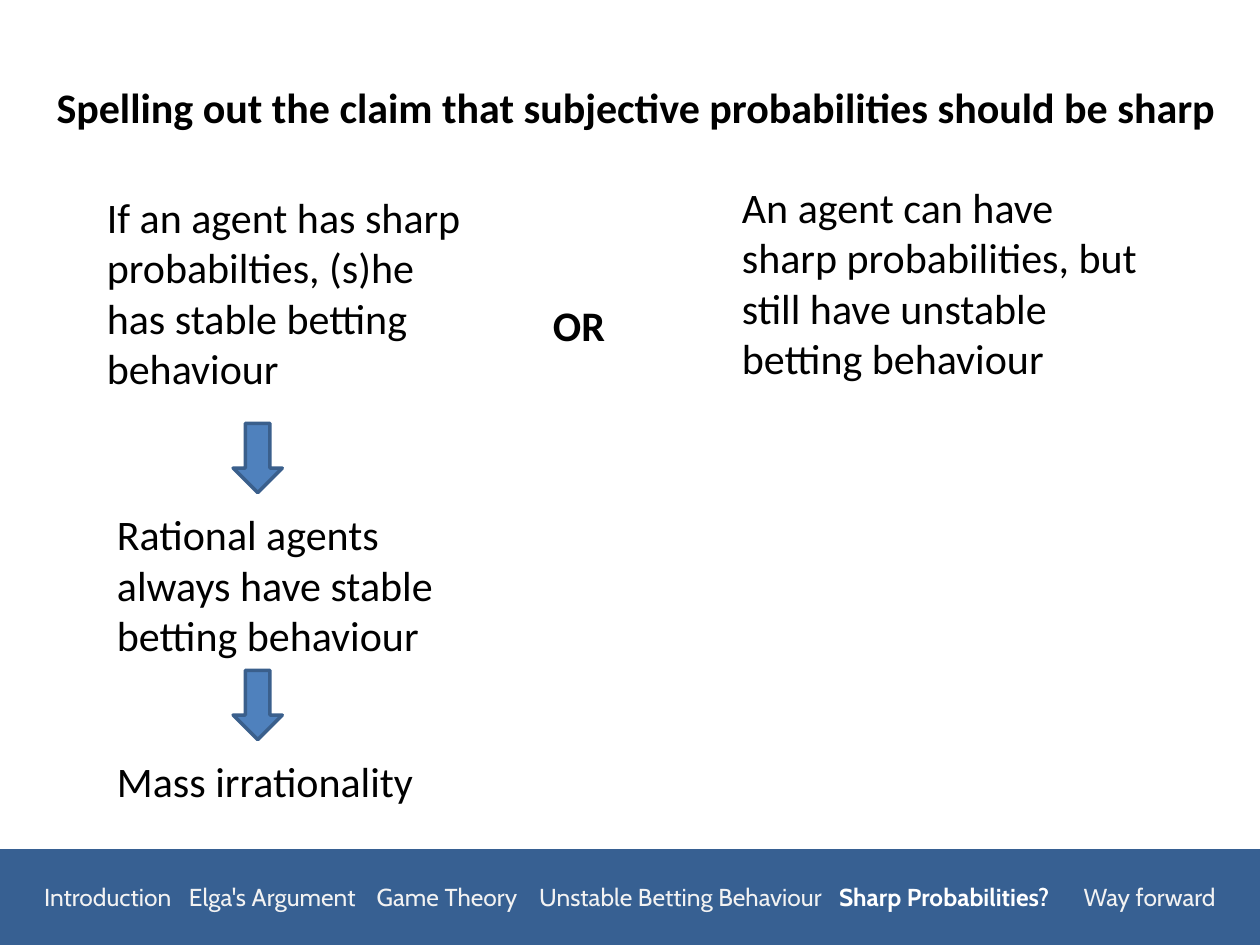
from pptx import Presentation
from pptx.dml.color import RGBColor
from pptx.enum.shapes import MSO_SHAPE
from pptx.enum.text import MSO_ANCHOR, MSO_AUTO_SIZE, PP_ALIGN
from pptx.oxml.ns import qn
from pptx.util import Inches, Pt
from lxml import etree


def color(hex_code):
    return RGBColor.from_string(hex_code)


def add_run(p, text, size, font, hex_code, bold=False):
    r = p.add_run()
    r.text = text
    r.font.size = Pt(size)
    r.font.name = font
    r.font.bold = bold
    r.font.color.rgb = color(hex_code)


def add_text(s, text, x, y, w, h, bold=False):
    tf = s.shapes.add_textbox(Inches(x), Inches(y), Inches(w), Inches(h)).text_frame
    tf.word_wrap = True
    tf.auto_size = MSO_AUTO_SIZE.SHAPE_TO_FIT_TEXT
    add_run(tf.paragraphs[0], text, 24, "Calibri", "000000", bold)


def add_block(s, kind, x, y, w, h, fill, line=None):
    sp = s.shapes.add_shape(kind, Inches(x), Inches(y), Inches(w), Inches(h))
    sp.shadow.inherit = False
    sp.fill.solid()
    sp.fill.fore_color.rgb = color(fill)
    if line:
        sp.line.color.rgb = color(line)
        sp.line.width = Pt(2)
    else:
        sp.line.fill.background()
    return sp


def add_argument(s, x, y):
    """Chain of claims leading downwards, joined by block arrows."""
    add_text(s, "If an agent has sharp probabilties, (s)he has stable betting behaviour",
             x, y, 3.07, 1.72)
    steps = [
        (1.89, "Rational agents always have stable betting behaviour", 1.31),
        (3.85, "Mass irrationality", 0.5),
    ]
    for dy, text, h in steps:
        add_block(s, MSO_SHAPE.DOWN_ARROW, x + 1.1, y + dy, 0.39, 0.55, "4F81BD", "3A5F8C")
        add_text(s, text, x + 0.08, y + dy + 0.63, 3.07, h)


def add_alternative(s, x, y):
    """The opposing claim, introduced by OR."""
    add_text(s, "OR", x, y + 0.94, 1.02, 0.5, bold=True)
    add_text(s, "An agent can have sharp probabilities, but still have unstable betting behaviour",
             x + 1.5, y, 3.46, 1.72)


def add_nav_bar(s, x, y, w, h):
    """Section names at tab stops, with the current section in bold."""
    sections = [("Introduction", 0.35), ("Elga's Argument", 1.5), ("Game Theory", 2.99),
                ("Unstable Betting Behaviour", 4.28), ("Sharp Probabilities?", 6.66),
                ("Way forward", 8.6)]
    current = "Sharp Probabilities?"
    start = sections[0][1]
    tf = add_block(s, MSO_SHAPE.RECTANGLE, x, y, w, h, "376092").text_frame
    tf.word_wrap = True
    tf.vertical_anchor = MSO_ANCHOR.MIDDLE
    tf.margin_left = Inches(start)
    tf.margin_right = 0
    p = tf.paragraphs[0]
    p.alignment = PP_ALIGN.LEFT
    tabs = etree.SubElement(p._p.get_or_add_pPr(), qn("a:tabLst"))
    for i, (name, pos) in enumerate(sections):
        if i:
            etree.SubElement(tabs, qn("a:tab"), pos=str(Inches(pos - start)), algn="l")
        active = name == current
        add_run(p, ("\t" if i else "") + name, 14, "Cabin",
                "FFFFFF" if active else "F2F2F2", active)


def main():
    prs = Presentation()
    prs.slide_width, prs.slide_height = Inches(10), Inches(7.5)
    s = prs.slides.add_slide(prs.slide_layouts[6])

    # Title
    add_text(s, "Spelling out the claim that subjective probabilities should be sharp",
             0.35, 0.6, 9.45, 0.5, bold=True)
    # Two competing claims
    add_argument(s, 0.75, 1.47)
    add_alternative(s, 4.29, 1.39)
    # Footer navigation
    add_nav_bar(s, 0, 6.74, 10, 0.76)

    prs.save("out.pptx")


if __name__ == "__main__":
    main()
